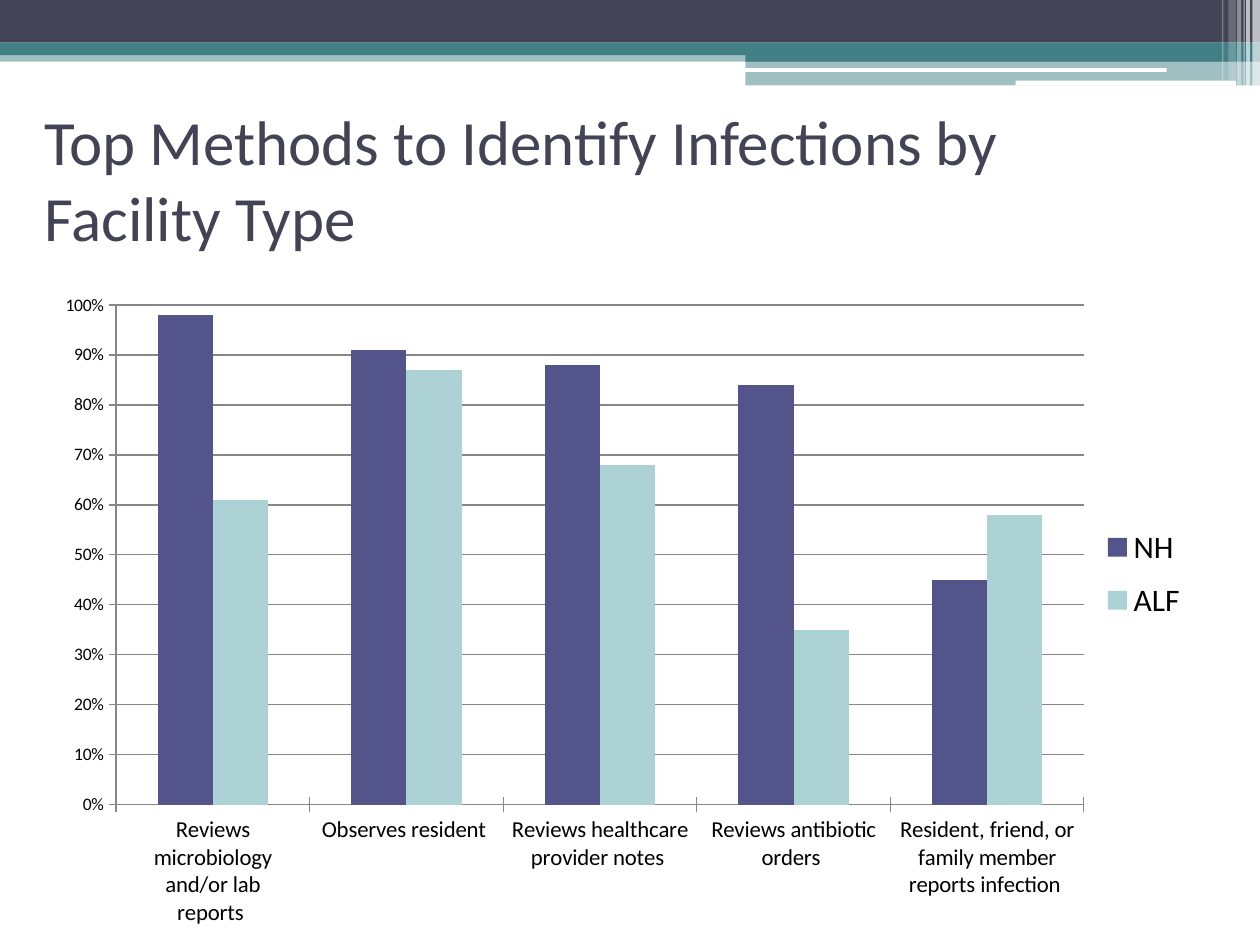
from lxml.etree import SubElement
from pptx import Presentation
from pptx.chart.data import CategoryChartData
from pptx.dml.color import RGBColor
from pptx.enum.chart import XL_CHART_TYPE as Kind, XL_LEGEND_POSITION as Side, XL_TICK_MARK as Tick
from pptx.enum.shapes import MSO_SHAPE as Form
from pptx.enum.text import MSO_ANCHOR as Anchor, PP_ALIGN as Align
from pptx.oxml.ns import qn
from pptx.util import Pt

FONT = "Calibri"
NAVY, TEAL, WHITE = "424456", "438086", "FFFFFF"
TITLE = "Top Methods to Identify Infections by \vFacility Type"
BANDS = [
    (0, 28.8, 720, 6.5, TEAL, 50),
    (0, 0, 720, 24.4, NAVY, 100),
    (0, 24.4, 720, 7.2, TEAL, 100),
    (426, 28.1, 294, 7.2, TEAL, 100),
    (426, 34.6, 294, 14.2, TEAL, 50),
]
PILLS = [(425.5, 38.9, 241.2, 2.2, WHITE, 100), (580.3, 46.1, 126, 2.9, WHITE, 100)]
STRIPES = [
    (715.7, 0, 4.3, 49, WHITE, 65),
    (712.1, 0, 2.2, 49, WHITE, 65),
    (710.6, 0, 0.7, 49, WHITE, 60),
    (707, 0, 2.2, 49, WHITE, 40),
    (702, 0, 4.3, 46.1, WHITE, 20),
    (698.4, 0, 0.7, 46.1, WHITE, 30),
]
CATS = [
    "Reviews microbiology and/or lab reports ",
    "Observes resident ",
    "Reviews healthcare provider notes ",
    "Reviews antibiotic orders ",
    "Resident, friend, or family member reports infection ",
]
SERIES = [
    ("NH ", (0.98, 0.91, 0.88, 0.84, 0.45), "53548A"),
    ("ALF ", (0.61, 0.87, 0.68, 0.35, 0.58), "ADD2D6"),
]


def paint(fill, color, alpha=100):
    fill.solid()
    fill.fore_color.rgb = RGBColor.from_string(color)
    if alpha < 100:
        tone = fill._xPr.find(".//" + qn("a:srgbClr"))
        SubElement(tone, qn("a:alpha"), val=str(alpha * 1000))


def style(font, size, color="000000"):
    font.name, font.size = FONT, Pt(size)
    font.color.rgb = RGBColor.from_string(color)


def draw(slide, form, items):
    for x, y, w, h, color, alpha in items:
        bar = slide.shapes.add_shape(form, Pt(x), Pt(y), Pt(w), Pt(h))
        bar.shadow.inherit = False
        bar.line.fill.background()
        paint(bar.fill, color, alpha)


def place(node, box, inner=False):
    for old in node.findall(qn("c:layout")):
        node.remove(old)
    layout = SubElement(node, qn("c:layout"))
    manual = SubElement(layout, qn("c:manualLayout"))
    if inner:
        SubElement(manual, qn("c:layoutTarget"), val="inner")
    for key in ("xMode", "yMode"):
        SubElement(manual, qn("c:" + key), val="edge")
    for key, val in zip("xywh", box):
        SubElement(manual, qn("c:" + key), val=str(val))
    node.insert(0 if inner else 1, layout)


def add_title(slide):
    title = slide.shapes.title
    title.left, title.top, title.width, title.height = Pt(18), Pt(54), Pt(684), Pt(96)
    frame = title.text_frame
    frame.text = TITLE
    frame.vertical_anchor = Anchor.MIDDLE
    para = frame.paragraphs[0]
    para.alignment = Align.LEFT
    for run in para.runs:
        style(run.font, 36, NAVY)


def add_bars(slide):
    data = CategoryChartData(number_format="0%")
    data.categories = CATS
    for name, vals, _ in SERIES:
        data.add_series(name, vals)
    chart = slide.shapes.add_chart(
        Kind.COLUMN_CLUSTERED, Pt(24), Pt(162), Pt(672), Pt(366), data
    ).chart
    style(chart.font, 10)
    chart.has_title = False
    plot = chart.plots[0]
    plot.gap_width, plot.overlap, plot.vary_by_categories = 150, 0, False
    for series, (_, _, color) in zip(plot.series, SERIES):
        paint(series.format.fill, color)
    cat, val = chart.category_axis, chart.value_axis
    val.minimum_scale, val.maximum_scale, val.major_unit = 0, 1, 0.1
    val.has_major_gridlines = True
    val.tick_labels.number_format = "0%"
    val.tick_labels.number_format_is_linked = False
    for axis, size in ((cat, 13), (val, 10)):
        axis.major_tick_mark = Tick.CROSS
        style(axis.tick_labels.font, size)
    for line in (cat.format.line, val.format.line, val.major_gridlines.format.line):
        paint(line.fill, "878787")
        line.width = Pt(0.75)
    chart.has_legend = True
    legend = chart.legend
    legend.position, legend.include_in_layout = Side.RIGHT, False
    style(legend.font, 18)
    place(legend._element, (0.89, 0.36, 0.1, 0.19))
    place(chart._chartSpace.chart.plotArea, (0.063, 0.034, 0.823, 0.783), True)


def main():
    deck = Presentation()
    deck.slide_width, deck.slide_height = Pt(720), Pt(540)
    slide = deck.slides.add_slide(deck.slide_layouts[5])
    draw(slide, Form.RECTANGLE, BANDS)
    draw(slide, Form.ROUNDED_RECTANGLE, PILLS)
    draw(slide, Form.RECTANGLE, STRIPES)
    add_title(slide)
    add_bars(slide)
    deck.save("out.pptx")


if __name__ == "__main__":
    main()
